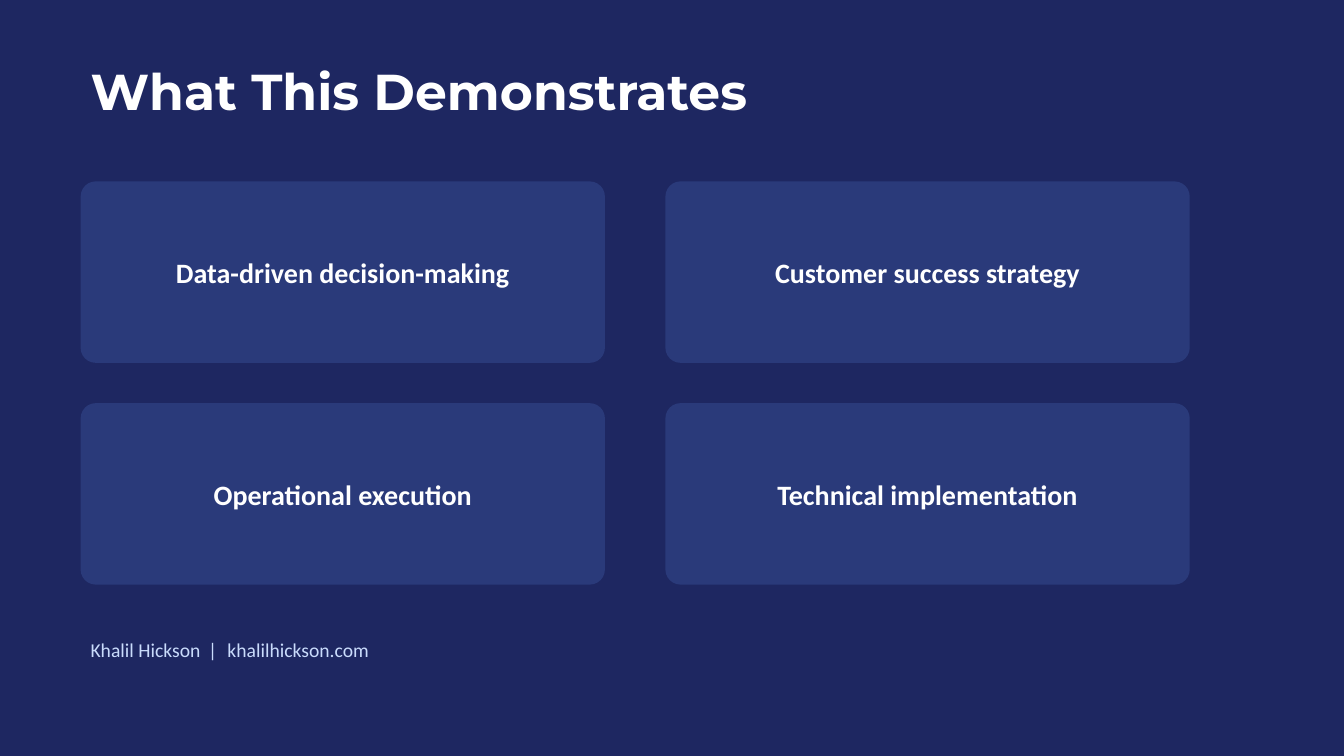
from pptx import Presentation
from pptx.dml.color import RGBColor
from pptx.enum import shapes, text
from pptx.util import Pt

TITLE = "What This Demonstrates"
SKILLS = [
    ["Data-driven decision-making", "Customer success strategy"],
    ["Operational execution", "Technical implementation"],
]
AUTHOR, SEPARATOR, SITE = "Khalil Hickson", " | ", "khalilhickson.com"

COLORS = {"page": "1E2761", "card": "2A3A7A", "white": "FFFFFF", "footer": "CADCFC"}
EMU_PER_PX = 9144  # 100 px to the inch
PAGE_SIZE = (1333, 750)
LEFT = 80
CARD_TOP, CARD_WIDTH, CARD_HEIGHT = 180, 520, 180
GAP_X, GAP_Y = 60, 40
CARD_RADIUS = 15


def emu(*lengths):
    return [length * EMU_PER_PX for length in lengths]


def color(name):
    return RGBColor.from_string(COLORS[name])


def write(box, words, size, font, color_name, bold=False, align=text.PP_ALIGN.LEFT):
    """Fill a shape's first paragraph, one run per string in words."""
    frame = box.text_frame
    frame.word_wrap = True
    frame.vertical_anchor = text.MSO_ANCHOR.MIDDLE
    para = frame.paragraphs[0]
    para.alignment = align
    for word in words:
        span = para.add_run()
        span.text = word
        span.font.size = Pt(size)
        span.font.name = font
        span.font.bold = bold
        span.font.color.rgb = color(color_name)
    return para


def add_card(page, row, column, label):
    left = LEFT + column * (CARD_WIDTH + GAP_X)
    top = CARD_TOP + row * (CARD_HEIGHT + GAP_Y)
    card = page.shapes.add_shape(
        shapes.MSO_SHAPE.ROUNDED_RECTANGLE, *emu(left, top, CARD_WIDTH, CARD_HEIGHT))
    card.adjustments[0] = CARD_RADIUS / CARD_HEIGHT
    card.shadow.inherit = False
    card.fill.solid()
    card.fill.fore_color.rgb = color("card")
    card.line.fill.background()
    write(card, [label], 20, "Calibri", "white", bold=True, align=text.PP_ALIGN.CENTER)


def main():
    deck = Presentation()
    deck.slide_width, deck.slide_height = emu(*PAGE_SIZE)
    page = deck.slides.add_slide(deck.slide_layouts[6])
    page.background.fill.solid()
    page.background.fill.fore_color.rgb = color("page")

    title = page.shapes.add_textbox(*emu(LEFT, 50, 1000, 80))
    write(title, [TITLE], 36, "Montserrat", "white", bold=True)

    for row, labels in enumerate(SKILLS):
        for column, label in enumerate(labels):
            add_card(page, row, column, label)

    footer = page.shapes.add_textbox(*emu(LEFT, 620, 800, 50))
    para = write(footer, [AUTHOR, SEPARATOR, SITE], 14, "Calibri", "footer")
    # Letter spacing, in hundredths of a point, widens the gaps around the bar
    para.runs[1].font._element.set("spc", "210")

    deck.save("out.pptx")


if __name__ == "__main__":
    main()
